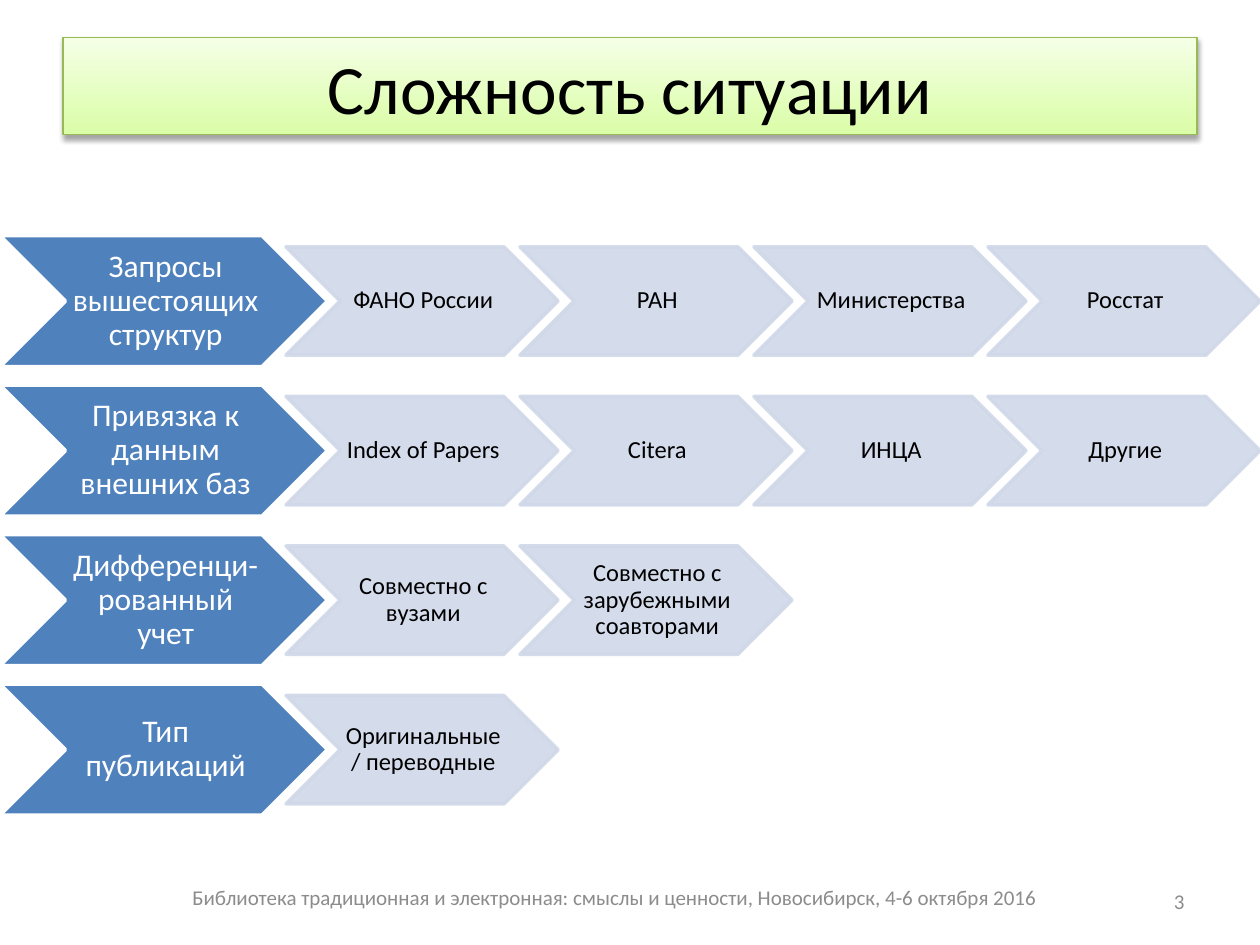
from dataclasses import dataclass

from lxml import etree
from pptx import Presentation
from pptx.dml.color import RGBColor
from pptx.enum import shapes, text
from pptx.oxml import ns
from pptx.util import Inches, Pt


@dataclass(frozen=True)
class Theme:
    font: str = "Calibri"
    black: str = "000000"
    white: str = "FFFFFF"
    grey: str = "8C8C8C"
    blue: str = "4F81BD"
    pale_blue: str = "D0D8E8"
    green_line: str = "98B954"
    green_top: str = "F5FFE6"
    green_bottom: str = "DAFDA7"
    title_size: float = 39.6
    topic_size: int = 18
    item_size: int = 14
    footer_size: int = 12


THEME = Theme()

# Each row: a topic followed by its items
ROWS = [
    ("Запросы вышестоящих структур", ["ФАНО России", "РАН", "Министерства", "Росстат"]),
    ("Привязка к данным внешних баз", ["Index of Papers", "Citera", "ИНЦА", "Другие"]),
    ("Дифференци-рованный учет", ["Совместно с вузами", "Совместно с зарубежными соавторами"]),
    ("Тип публикаций", ["Оригинальные / переводные"]),
]

# Chevron grid, in inches
ROW_TOP, ROW_PITCH = 1.87, 3.56 / 3
TOPIC_WIDTH, TOPIC_HEIGHT = 2.6, 1.04
ITEM_LEFT, ITEM_PITCH = 2.27, 1.857
ITEM_WIDTH, ITEM_HEIGHT = 2.16, 0.86


def rgb(color):
    return RGBColor.from_string(color)


def write(shape, words, size, color, align, insets=(0.1, 0.05, 0.1, 0.05)):
    """Put one vertically centred paragraph into a shape."""
    frame = shape.text_frame
    frame.text = words
    frame.word_wrap = True
    frame.auto_size = text.MSO_AUTO_SIZE.NONE
    frame.vertical_anchor = text.MSO_ANCHOR.MIDDLE
    frame.margin_left, frame.margin_top, frame.margin_right, frame.margin_bottom = map(Inches, insets)
    paragraph = frame.paragraphs[0]
    paragraph.alignment = align
    paragraph.font.name = THEME.font
    paragraph.font.size = Pt(size)
    paragraph.font.color.rgb = rgb(color)
    return paragraph


def set_opacity(shape, percent):
    """Apply the opacity to both the fill and the outline."""
    for color in shape._element.spPr.iter(ns.qn("a:srgbClr")):
        etree.SubElement(color, ns.qn("a:alpha"), val=str(percent * 1000))


def add_soft_shadow(shape):
    shape.shadow.inherit = False
    effects = shape._element.spPr.find(ns.qn("a:effectLst"))
    shadow = etree.SubElement(effects, ns.qn("a:outerShdw"), blurRad="40000",
                              dist="23000", dir="5400000", rotWithShape="0")
    color = etree.SubElement(shadow, ns.qn("a:srgbClr"), val=THEME.black)
    etree.SubElement(color, ns.qn("a:alpha"), val="35000")


def format_title(title, words):
    title.left, title.top, title.width, title.height = map(Inches, (0.5, 0.3, 9, 0.77))
    title.fill.gradient()
    title.fill.gradient_angle = 270
    for stop, color in zip(title.fill.gradient_stops, (THEME.green_top, THEME.green_bottom)):
        stop.color.rgb = rgb(color)
    title.line.color.rgb = rgb(THEME.green_line)
    title.line.width = Pt(0.75)
    add_soft_shadow(title)
    write(title, words, THEME.title_size, THEME.black, text.PP_ALIGN.CENTER)


def add_chevron(slide, box, words, size, color, fill, line, left_inset):
    chevron = slide.shapes.add_shape(shapes.MSO_SHAPE.CHEVRON, *map(Inches, box))
    chevron.shadow.inherit = False
    chevron.fill.solid()
    chevron.fill.fore_color.rgb = rgb(fill)
    chevron.line.color.rgb = rgb(line)
    chevron.line.width = Pt(2)
    paragraph = write(chevron, words, size, color, text.PP_ALIGN.CENTER,
                      (left_inset, 0.01, 0, 0.01))
    paragraph.line_spacing = 0.9
    return chevron


def add_row(slide, top, topic, items):
    add_chevron(slide, (0, top, TOPIC_WIDTH, TOPIC_HEIGHT), topic,
                THEME.topic_size, THEME.white, THEME.blue, THEME.white, 0.03)
    item_top = top + (TOPIC_HEIGHT - ITEM_HEIGHT) / 2
    for column, item in enumerate(items):
        left = ITEM_LEFT + column * ITEM_PITCH
        chevron = add_chevron(slide, (left, item_top, ITEM_WIDTH, ITEM_HEIGHT), item,
                              THEME.item_size, THEME.black, THEME.pale_blue, THEME.pale_blue, 0.02)
        set_opacity(chevron, 90)


def add_footer_text(slide, box, words, align):
    footer = slide.shapes.add_textbox(*map(Inches, box))
    write(footer, words, THEME.footer_size, THEME.grey, align)


def main():
    presentation = Presentation()
    presentation.slide_width, presentation.slide_height = Inches(10), Inches(7.5)
    slide = presentation.slides.add_slide(presentation.slide_layouts[5])

    # Title banner
    format_title(slide.shapes.title, "Сложность ситуации")

    # Chevron rows
    for index, (topic, items) in enumerate(ROWS):
        add_row(slide, ROW_TOP + index * ROW_PITCH, topic, items)

    # Page number and footer
    add_footer_text(slide, (7.17, 6.95, 2.33, 0.4), "3", text.PP_ALIGN.RIGHT)
    add_footer_text(slide, (0.51, 6.95, 8.74, 0.34),
                    "Библиотека традиционная и электронная: смыслы и ценности, "
                    "Новосибирск, 4-6 октября 2016", text.PP_ALIGN.CENTER)

    presentation.save("out.pptx")


if __name__ == "__main__":
    main()
